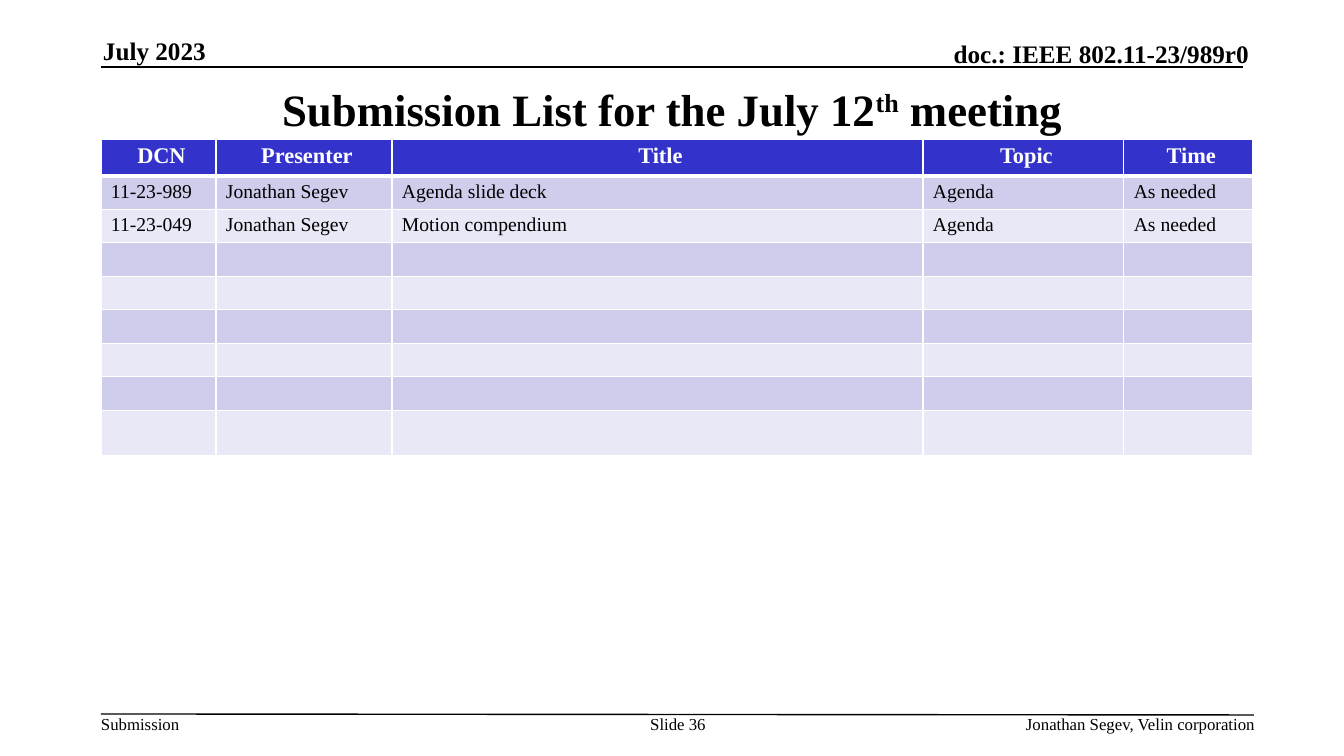
from dataclasses import dataclass

from lxml import etree
from pptx import Presentation
from pptx.dml.color import RGBColor
from pptx.enum.shapes import MSO_CONNECTOR
from pptx.enum.text import MSO_ANCHOR, PP_ALIGN
from pptx.oxml.ns import qn
from pptx.util import Emu, Pt

LEFT, CENTER, RIGHT = PP_ALIGN.LEFT, PP_ALIGN.CENTER, PP_ALIGN.RIGHT
TOP, MIDDLE, BOTTOM = MSO_ANCHOR.TOP, MSO_ANCHOR.MIDDLE, MSO_ANCHOR.BOTTOM
STRAIGHT = MSO_CONNECTOR.STRAIGHT
EMU_PER_PX = 914400 / 100.8


@dataclass(frozen=True)
class Theme:
    font: str = "Times New Roman"
    ink: str = "000000"
    paper: str = "FFFFFF"
    heading_fill: str = "3333CC"
    bands: tuple = ("CECEEC", "E8E8F6")
    title_size: int = 32
    header_size: int = 18
    heading_size: int = 16
    body_size: int = 14
    footer_size: int = 12
    rule: int = 1
    heavy_rule: int = 3


def px(length):
    return Emu(round(length * EMU_PER_PX))


class SlideBuilder:
    def __init__(self, slide, theme):
        self.slide = slide
        self.theme = theme

    def span(self, para, text, size, bold=False, color=None, raised=False):
        run = para.add_run()
        run.text = text
        run.font.name = self.theme.font
        run.font.size = Pt(size)
        run.font.bold = bold
        run.font.color.rgb = RGBColor.from_string(color or self.theme.ink)
        if raised:
            run.font._element.set("baseline", "30000")

    def text(self, place, spans, size, align=LEFT, anchor=TOP, bold=False, inset=(0, 0), wrap=True):
        box = self.slide.shapes.add_textbox(*map(px, place))
        frame = box.text_frame
        frame.word_wrap = wrap
        frame.vertical_anchor = anchor
        frame.margin_left = frame.margin_right = px(inset[0])
        frame.margin_top = frame.margin_bottom = px(inset[1])
        para = frame.paragraphs[0]
        para.alignment = align
        for text, raised in spans:
            self.span(para, text, size, bold, raised=raised)

    def line(self, *ends):
        line = self.slide.shapes.add_connector(STRAIGHT, *map(px, ends))
        line.line.color.rgb = RGBColor.from_string(self.theme.ink)
        line.line.width = Pt(self.theme.rule)
        etree.SubElement(line._element.spPr, qn("a:effectLst"))

    def borders(self, cell, widths):
        properties = cell._tc.get_or_add_tcPr()
        for side, width in zip("LRTB", widths):
            edge = etree.SubElement(properties, qn(f"a:ln{side}"), w=str(Pt(width)))
            fill = etree.SubElement(edge, qn("a:solidFill"))
            etree.SubElement(fill, qn("a:srgbClr"), val=self.theme.paper)

    def cell(self, cell, text, row):
        theme = self.theme
        heading = row == 0
        thin, thick = theme.rule, theme.heavy_rule
        self.borders(cell, (thin, thin, thick if row == 1 else thin, thick if heading else thin))
        cell.fill.solid()
        fill = theme.heading_fill if heading else theme.bands[(row - 1) % 2]
        cell.fill.fore_color.rgb = RGBColor.from_string(fill)
        cell.margin_left = px(10)
        cell.margin_right = px(4 if heading else 10)
        cell.margin_top = cell.margin_bottom = px(5)
        para = cell.text_frame.paragraphs[0]
        para.alignment = CENTER if heading else LEFT
        if heading:
            self.span(para, text, theme.heading_size, True, theme.paper)
        elif text:
            self.span(para, text, theme.body_size)
        else:
            etree.SubElement(para._p, qn("a:endParaRPr"), sz=str(theme.body_size * 100))

    def table(self, left, top, widths, heights, rows):
        place = (left, top, sum(widths), sum(heights))
        table = self.slide.shapes.add_table(len(heights), len(widths), *map(px, place)).table
        table.horz_banding = False
        for column, width in zip(table.columns, widths):
            column.width = px(width)
        for index, height in enumerate(heights):
            table.rows[index].height = px(height)
            texts = rows[index] if index < len(rows) else [""] * len(widths)
            for column, text in enumerate(texts):
                self.cell(table.cell(index, column), text, index)


def main():
    deck = Presentation()
    deck.slide_width, deck.slide_height = px(1344), px(756)
    theme = Theme()
    page = SlideBuilder(deck.slides.add_slide(deck.slide_layouts[6]), theme)

    page.line(101, 67, 1243, 67)
    page.line(101, 714, 1254, 715)
    page.text((735, 39, 514, 30), [("doc.: IEEE 802.11-23/989r0", False)],
              theme.header_size, RIGHT, BOTTOM, bold=True)
    page.text((103, 36, 275, 30), [("July 2023", False)],
              theme.header_size, LEFT, BOTTOM, bold=True)
    page.text((101, 76, 1142, 65),
              [("Submission List for the July 12", False), ("th", True), (" meeting", False)],
              theme.title_size, CENTER, MIDDLE, bold=True, inset=(10, 5))
    page.text((101, 714, 80, 20), [("Submission", False)], theme.footer_size, wrap=False)
    page.text((639, 714, 78, 40), [("Slide 36", False)], theme.footer_size, CENTER)
    page.text((787, 714, 468, 20), [("Jonathan Segev, Velin corporation", False)],
              theme.footer_size, RIGHT)

    submissions = [
        ("DCN", "Presenter", "Title", "Topic", "Time"),
        ("11-23-989", "Jonathan Segev", "Agenda slide deck", "Agenda", "As needed"),
        ("11-23-049", "Jonathan Segev", "Motion compendium", "Agenda", "As needed"),
    ]
    page.table(101, 139, (115, 176, 531, 201, 129), (35, *[32] * 7, 45), submissions)
    deck.save("out.pptx")


if __name__ == "__main__":
    main()
